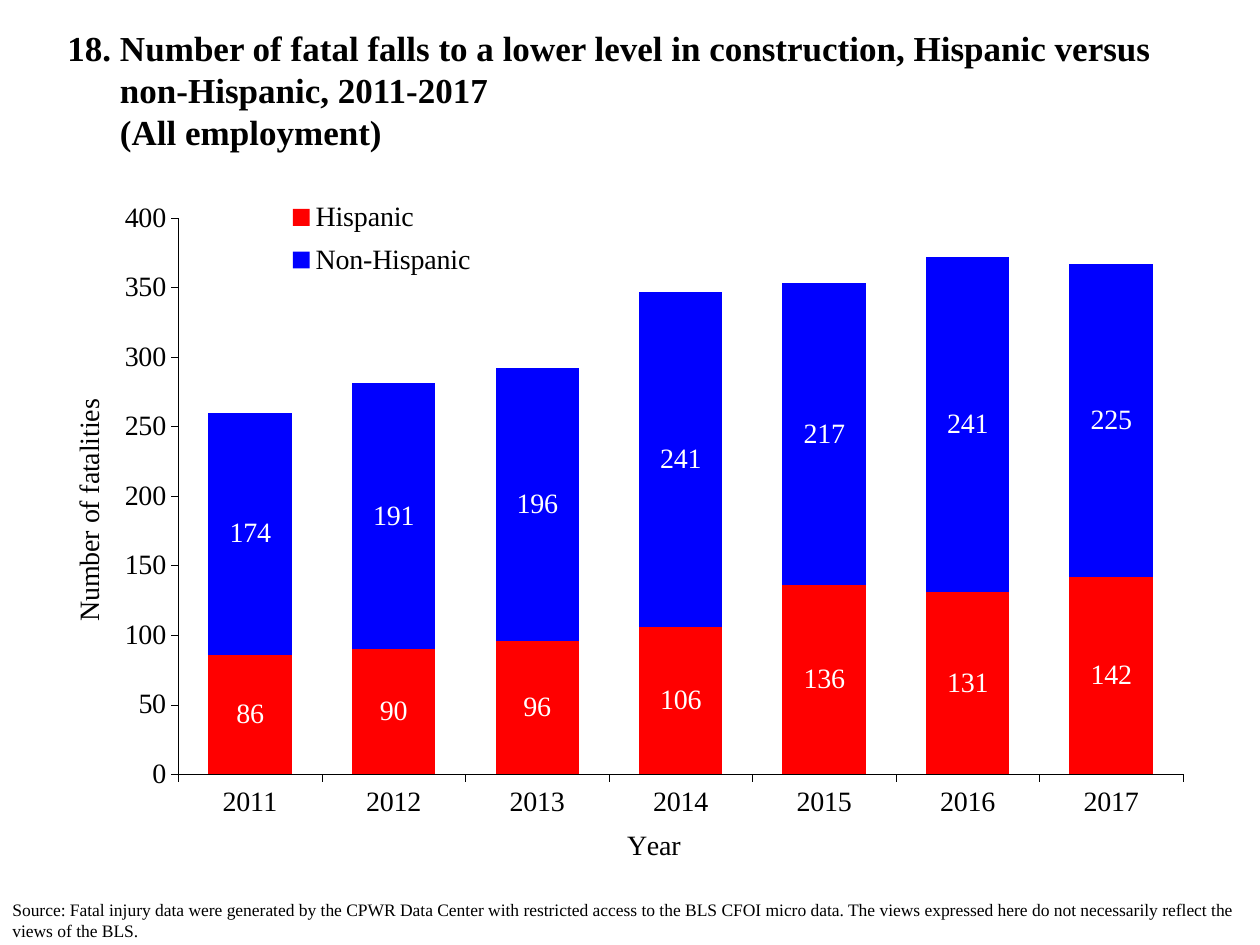
from pptx import Presentation
from pptx.chart.data import CategoryChartData
from pptx.dml.color import RGBColor
from pptx.enum.chart import XL_CHART_TYPE, XL_LABEL_POSITION, XL_LEGEND_POSITION, XL_TICK_MARK
from pptx.enum.text import MSO_ANCHOR
from pptx.oxml import parse_xml
from pptx.oxml.ns import nsdecls
from pptx.util import Pt

COLORS = {"black": "000000", "white": "FFFFFF", "red": "FF0000", "blue": "0000FF"}


def style(font, size, color="black", bold=False):
    font.name = "Times New Roman"
    font.size = Pt(size)
    font.bold = bold
    font.color.rgb = RGBColor.from_string(COLORS[color])


def place(part, index, x, y, w, h, inner=False):
    """Give a chart part a fixed place, in fractions of the chart."""
    for old in part.xpath("c:layout"):
        part.remove(old)
    target = '<c:layoutTarget val="inner"/>' if inner else ""
    modes = '<c:xMode val="edge"/><c:yMode val="edge"/>'
    sizes = "".join(f'<c:{k} val="{v}"/>' for k, v in zip("xywh", (x, y, w, h)))
    part.insert(index, parse_xml(
        f'<c:layout {nsdecls("c")}><c:manualLayout>{target}{modes}{sizes}'
        "</c:manualLayout></c:layout>"))


prs = Presentation()
prs.slide_width, prs.slide_height = Pt(720), Pt(540)
slide = prs.slides.add_slide(prs.slide_layouts[6])

# Title, with a hanging indent as wide as its number
frame = slide.shapes.add_textbox(Pt(31.5), Pt(24), Pt(657), Pt(54)).text_frame
frame.word_wrap = True
frame.vertical_anchor = MSO_ANCHOR.MIDDLE
para = frame.paragraphs[0]
props = para._p.get_or_add_pPr()
props.set("marL", str(Pt(30)))
props.set("indent", str(-Pt(30)))
lines = [
    "18. Number of fatal falls to a lower level in construction, Hispanic versus",
    "non-Hispanic, 2011-2017",
    "(All employment)",
]
for i, line in enumerate(lines):
    if i:
        para.add_line_break()
    run = para.add_run()
    run.text = line
    style(run.font, 20, bold=True)

# Stacked columns
data = CategoryChartData()
data.categories = [str(year) for year in range(2011, 2018)]
data.add_series("Hispanic", (86, 90, 96, 106, 136, 131, 142))
data.add_series("Non-Hispanic", (174, 191, 196, 241, 217, 241, 225))
chart = slide.shapes.add_chart(
    XL_CHART_TYPE.COLUMN_STACKED, Pt(37.5), Pt(105), Pt(645), Pt(392.5), data).chart
style(chart.font, 16)
chart.has_title = False
place(chart._chartSpace.xpath("c:chart/c:plotArea")[0], 0, 0.1, 0.05, 0.89, 0.81, inner=True)

plot = chart.plots[0]
plot.gap_width, plot.overlap = 72, 100
plot.vary_by_categories = False
for series, color in zip(plot.series, ("red", "blue")):
    series.format.fill.solid()
    series.format.fill.fore_color.rgb = RGBColor.from_string(COLORS[color])
    labels = series.data_labels
    labels.show_value = True
    labels.position = XL_LABEL_POSITION.CENTER
    style(labels.font, 16, "white")

for axis, name in ((chart.category_axis, "Year"), (chart.value_axis, "Number of fatalities")):
    axis.has_major_gridlines = False
    axis.major_tick_mark = XL_TICK_MARK.OUTSIDE
    axis.format.line.width = Pt(0.19)
    axis.format.line.color.rgb = RGBColor.from_string(COLORS["black"])
    style(axis.tick_labels.font, 16)
    run = axis.axis_title.text_frame.paragraphs[0].add_run()
    run.text = name
    style(run.font, 16)

scale = chart.value_axis
scale.minimum_scale, scale.maximum_scale, scale.major_unit = 0, 400, 50
scale.tick_labels.number_format = "#,##0"
scale.tick_labels.number_format_is_linked = False

chart.has_legend = True
legend = chart.legend
legend.position = XL_LEGEND_POSITION.TOP
legend.include_in_layout = False
style(legend.font, 16)
place(legend._element, 1, 0.19, 0.01, 0.18, 0.14)

# Source note
frame = slide.shapes.add_textbox(0, Pt(510), Pt(720), Pt(31.5)).text_frame
frame.word_wrap = True
run = frame.paragraphs[0].add_run()
run.text = (
    "Source: Fatal injury data were generated by the CPWR Data Center with restricted access "
    "to the BLS CFOI micro data. The views expressed here do not necessarily reflect the "
    "views of the BLS.")
style(run.font, 10)

prs.save("out.pptx")
